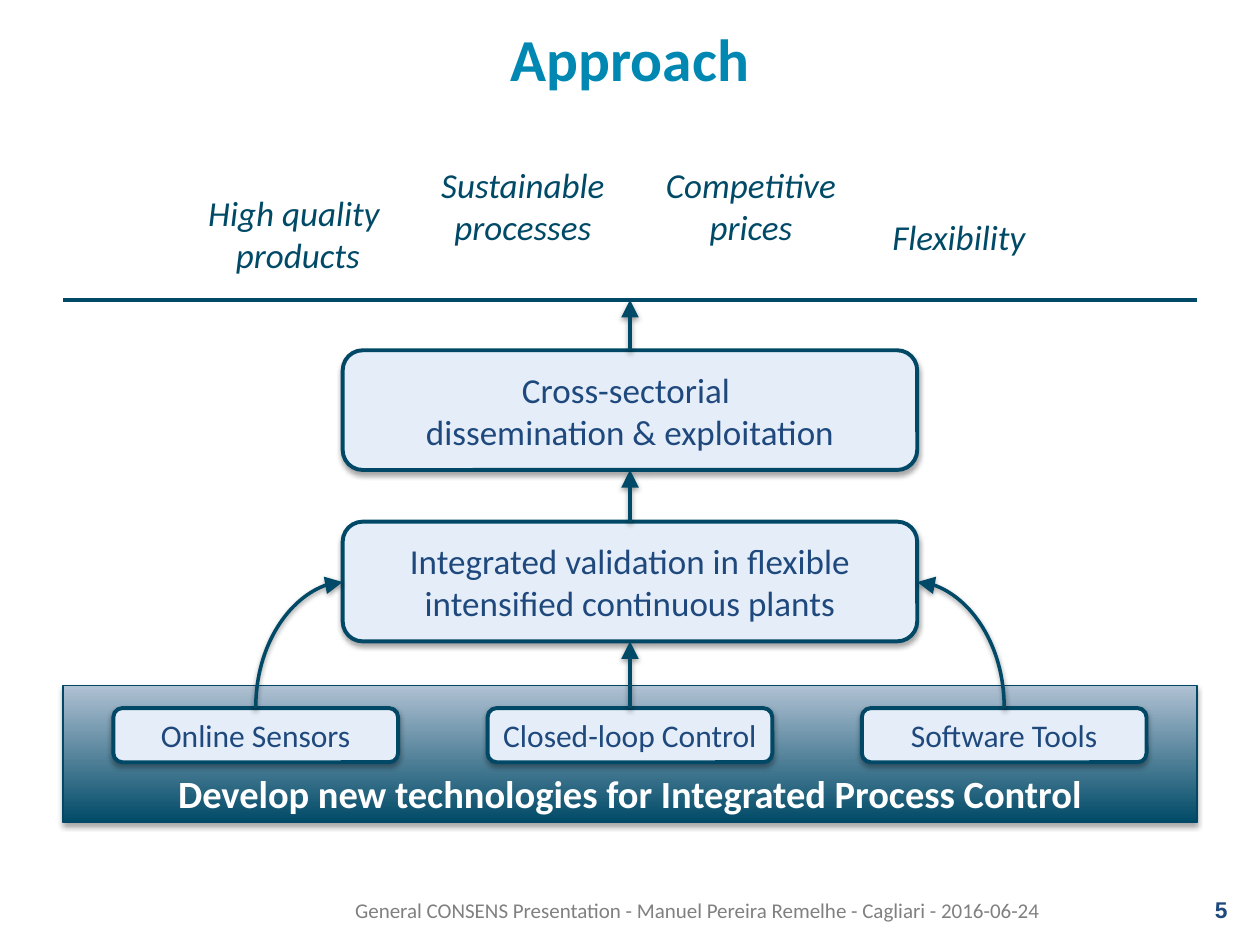
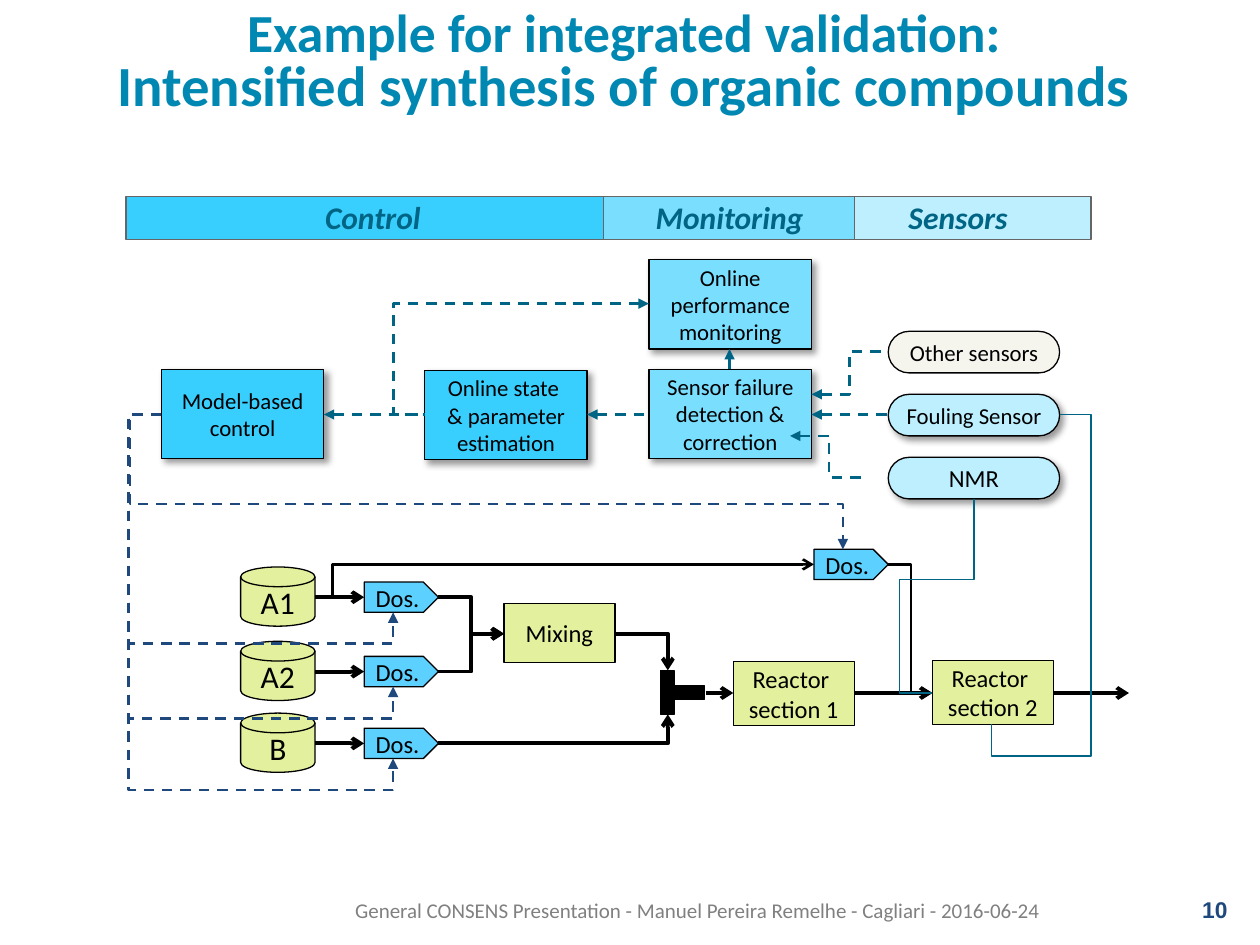
from lxml.etree import SubElement
from pptx import Presentation
from pptx.dml.color import RGBColor
from pptx.enum.dml import MSO_LINE
from pptx.enum.shapes import MSO_CONNECTOR as LINK, MSO_SHAPE as KIND
from pptx.enum.text import MSO_ANCHOR as ANCHOR, PP_ALIGN as ALIGN
from pptx.oxml import parse_xml
from pptx.oxml.ns import qn
from pptx.util import Inches, Pt

# The slide is a grid of 100 columns by 75 rows.
CELL = Inches(0.1)
COLUMNS, ROWS = 100, 75
TOP, LEFT, BOTTOM, RIGHT = range(4)

paint = RGBColor.from_string
TITLE_BLUE, NAVY, GREY, BLACK = "0087B2", "1F497D", "808080", "000000"
PETROL, EDGE, PALE = "004A67", "004865", "E4EDF8"
TEAL, CONTROL, MONITORING, SENSORS = "006585", "38CFFF", "7ADFFF", "BDEFFF"
VESSEL, DOSING, NEUTRAL = "E3F19E", "5CD1FF", "F5F4ED"

EFFECTS = ('<a:effectLst xmlns:a="http://schemas.openxmlformats.org/'
           'drawingml/2006/main">{}</a:effectLst>')
SHADOW = ('<a:outerShdw blurRad="{}" dist="{}" dir="{}" rotWithShape="0">'
          '<a:srgbClr val="000000"><a:alpha val="{}"/></a:srgbClr></a:outerShdw>')
BOX_SHADOW = SHADOW.format(Pt(3.1), Pt(1.8), 5400000, 35000)
ARROW_SHADOW = SHADOW.format(Pt(3.1), Pt(1.6), 5400000, 38000)
CORNER_SHADOW = SHADOW.format(Pt(4), Pt(3), 2700000, 40000)


def block(slide, kind, at, text="", fill=None, edge=BLACK, weight=0.75, shadow="",
          color=BLACK, align=ALIGN.CENTER, anchor=ANCHOR.MIDDLE, inset=None, **font):
    """Place a preset shape, or a text box when kind is None."""
    box = [round(length * CELL) for length in at]
    if kind is None:
        shape = slide.shapes.add_textbox(*box)
    else:
        shape = slide.shapes.add_shape(kind, *box)
        shape.line.color.rgb = paint(edge)
        shape.line.width = Pt(weight)
        if fill:
            shape.fill.solid()
            shape.fill.fore_color.rgb = paint(fill)
        shape._element.spPr.append(parse_xml(EFFECTS.format(shadow)))
    frame = shape.text_frame
    frame.word_wrap = True
    frame.vertical_anchor = anchor
    if inset is not None:
        for side in ("left", "top", "right", "bottom"):
            setattr(frame, f"margin_{side}", inset)
    if text:
        paragraph = frame.paragraphs[0]
        paragraph.text = text
        paragraph.alignment = align
        for run in paragraph.runs:
            run.font.color.rgb = paint(color)
            for name, value in {"name": "Calibri", **font}.items():
                setattr(run.font, name, value)
    return shape


def route(slide, points, color, weight, start=None, end=None, head=None, tail=None,
          arrow_size="med", dashed=False, shadow="", style="bent"):
    """Draw a connector through points; start and end are (shape, site) to glue to."""
    first, last = points[0], points[-1]
    ends = [round(length * CELL) for length in (*first, *last)]
    link = LINK.STRAIGHT if len(points) == 2 else LINK.ELBOW
    line = slide.shapes.add_connector(link, *ends)
    if start:
        line.begin_connect(*start)
    if end:
        line.end_connect(*end)
    for name, length in zip(("begin_x", "begin_y", "end_x", "end_y"), ends):
        setattr(line, name, length)

    properties = line._element.spPr
    if len(points) > 2:
        geometry = properties.find(qn("a:prstGeom"))
        geometry.set("prst", f"{style}Connector{len(points) - 1}")
        for turn, point in enumerate(points[1:-2]):
            axis = turn % 2
            share = (point[axis] - first[axis]) / (last[axis] - first[axis])
            SubElement(geometry.find(qn("a:avLst")), qn("a:gd"),
                       name=f"adj{turn + 1}", fmla=f"val {round(share * 100000)}")
    line.line.color.rgb = paint(color)
    line.line.width = Pt(weight)
    if dashed:
        line.line.dash_style = MSO_LINE.DASH
    for tag, arrow in (("a:headEnd", head), ("a:tailEnd", tail)):
        if arrow:
            SubElement(properties.find(qn("a:ln")), qn(tag), type=arrow,
                       w=arrow_size, len=arrow_size)
    properties.append(parse_xml(EFFECTS.format(shadow)))


deck = Presentation()
deck.slide_width, deck.slide_height = COLUMNS * CELL, ROWS * CELL

# Title, footer and number of both slides
pages = []
for number, heading, sizes in [
    ("5", "Approach", [34]),
    ("10", "Example for integrated validation: \n"
           "Intensified synthesis of organic compounds ", [30.6, 32.4]),
]:
    page = deck.slides.add_slide(deck.slide_layouts[6])
    block(page, None, (27.2, 70.2, 60.1, 4),
          "General CONSENS Presentation - Manuel Pereira Remelhe - Cagliari - 2016-06-24",
          color=GREY, align=ALIGN.LEFT, size=Pt(12))
    block(page, None, (89.6, 70.2, 8.8, 4), number, color=NAVY, align=ALIGN.RIGHT,
          name="Arial", size=Pt(13), bold=True)
    title = block(page, None, (5, 1.5, 90, 7.2), heading, color=TITLE_BLUE, bold=True)
    lines = title.text_frame.paragraphs[0]
    lines.line_spacing = 0.8
    for run, size in zip(lines.runs, sizes):
        run.font.size = Pt(size)
    pages.append(page)
approach, example = pages

# Approach: technologies at the bottom, goals at the top
base = block(approach, KIND.RECTANGLE, (5, 54.4, 90, 10.9),
             "Develop new technologies for Integrated Process Control", edge=EDGE,
             shadow=BOX_SHADOW, color="FFFFFF", anchor=ANCHOR.BOTTOM,
             size=Pt(22), bold=True)
base.fill.gradient()
base.fill.gradient_angle = 90
for stop, shade in zip(base.fill.gradient_stops, (PETROL, "B0C1D3")):
    stop.color.rgb = paint(shade)

card = dict(fill=PALE, edge=EDGE, weight=2.25, shadow=BOX_SHADOW, color=NAVY)
sensors, control, tools = [
    block(approach, KIND.ROUNDED_RECTANGLE, (9 + 29.7 * column, 56.2, 22.6, 4.3),
          technology, size=Pt(18), **card)
    for column, technology in enumerate(
        ["Online Sensors", "Closed-loop Control", "Software Tools"])
]
validation, exploitation = [
    block(approach, KIND.ROUNDED_RECTANGLE, (27.2, top, 45.6, 9.5), step,
          size=Pt(20), **card)
    for top, step in [
        (41.4, "Integrated validation in flexible intensified continuous plants"),
        (27.8, "Cross-sectorial \ndissemination & exploitation")]
]
for at, goal in [
    ((11.6, 14.7, 24.1, 7.7), "High quality \nproducts"),
    ((32.4, 12.5, 18.2, 7.7), "Sustainable\nprocesses"),
    ((50.5, 12.5, 18.2, 7.7), "Competitive prices"),
    ((62.7, 16.6, 26.8, 4.4), "Flexibility"),
]:
    block(approach, None, at, goal, color=PETROL, anchor=ANCHOR.TOP,
          size=Pt(20), italic=True)

route(approach, [(5, 23.8), (95, 23.8)], PETROL, 2)
for low, high in [(56.2, 50.9), (41.4, 37.3), (27.8, 23.8)]:
    route(approach, [(50, low), (50, high)], PETROL, 2, tail="triangle",
          arrow_size="lg", shadow=ARROW_SHADOW)
for side, edge_x, source, source_x in [(RIGHT, 72.8, tools, 79.7),
                                       (LEFT, 27.2, sensors, 20.3)]:
    route(approach, [(edge_x, 46.2), (source_x, 46.2), (source_x, 56.2)], PETROL, 2,
          start=(validation, side), end=(source, TOP), head="triangle",
          arrow_size="lg", shadow=ARROW_SHADOW, style="curved")

# Example: header bands
for left, width, fill, label_left, label, align in [
    (10, 37.9, CONTROL, 22.6, "Control", ALIGN.CENTER),
    (47.9, 20, MONITORING, 50.9, "Monitoring", ALIGN.CENTER),
    (67.8, 18.8, SENSORS, 72.1, "Sensors", ALIGN.LEFT),
]:
    block(example, KIND.RECTANGLE, (left, 15.6, width, 3.4), fill=fill, edge="666666")
    block(example, None, (label_left, 15.7, 14, 3.3), label, color=TEAL, align=align,
          anchor=ANCHOR.TOP, inset=0, size=Pt(18), bold=True, italic=True)

# Example: software functions and sensors
model, estimation, detection, performance = [
    block(example, KIND.RECTANGLE, (left, top, 12.9, 7.1), function, fill=fill,
          shadow=CORNER_SHADOW, inset=0, size=Pt(13))
    for left, top, fill, function in [
        (12.8, 29.3, CONTROL, "Model-based control"),
        (33.7, 29.4, CONTROL, "Online state \n& parameter estimation"),
        (51.5, 29.3, MONITORING, "Sensor failure detection &\ncorrection"),
        (51.5, 20.6, MONITORING, "Online performance monitoring")]
]
other, fouling, nmr = [
    block(example, KIND.ROUNDED_RECTANGLE, (70.5, 26.3 + 5 * row, 13.6, 3.3), sensor,
          fill=fill, shadow=shadow, inset=0, size=Pt(size))
    for row, (sensor, fill, shadow, size) in enumerate([
        ("Other sensors", NEUTRAL, "", 13),
        ("Fouling Sensor", SENSORS, CORNER_SHADOW, 13),
        ("NMR", SENSORS, CORNER_SHADOW, 14)])
]
for sensor in (other, fouling, nmr):
    sensor.adjustments[0] = 0.5

# Example: plant
mixing, reactor_1, reactor_2 = [
    block(example, KIND.FLOWCHART_PROCESS, at, unit, fill=VESSEL, inset=0, size=Pt(14))
    for at, unit in [((40, 47.9, 8.8, 4.7), "Mixing"),
                     ((58.2, 52.5, 9.6, 5.1), "Reactor \nsection 1"),
                     ((74, 52.4, 9.6, 5.1), "Reactor \nsection 2")]
]
junction, outlet = [
    block(example, KIND.FLOWCHART_PROCESS, at, fill=BLACK)
    for at in [(52.4, 53.2, 1.1, 3.5), (52.4, 54.4, 3.5, 1.1)]
]
doser = dict(text="Dos.", fill=DOSING, inset=0, size=Pt(14))
recycle_doser = block(example, KIND.PENTAGON, (64.6, 43.6, 5.9, 2.4), **doser)
dosers = []
signal = dict(color=NAVY, weight=1.5, tail="triangle", dashed=True)
for tank, middle in [("A1", 47.4), ("A2", 53.3), ("B", 59)]:
    block(example, KIND.FLOWCHART_MAGNETIC_DISK, (19.1, middle - 2.4, 5.9, 4.7), tank,
          fill=VESSEL, inset=0, size=Pt(18))
    dosers.append(block(example, KIND.PENTAGON, (28.9, middle - 1.2, 5.9, 2.4), **doser))
    route(example, [(25, middle), (28.9, middle)], BLACK, 2.25, tail="arrow")
for doser_a, middle in zip(dosers, (47.4, 53.3, 59)):
    route(example, [(12.8, 32.9), (10.2, 32.9), (10.2, middle + 3.7),
                    (31.2, middle + 3.7), (31.2, middle + 1.2)],
          start=(model, LEFT), end=(doser_a, BOTTOM), **signal)
route(example, [(12.8, 32.9), (10.3, 32.9), (10.3, 40), (66.9, 40), (66.9, 43.6)],
      start=(model, LEFT), end=(recycle_doser, TOP), **signal)

# Example: material flow
dose_a1, dose_a2, dose_b = dosers
for points, weight, start, end in [
    ([(34.8, 47.4), (37.4, 47.4), (37.4, 50.3), (40, 50.3)], 2.25,
     (dose_a1, RIGHT), (mixing, LEFT)),
    ([(34.8, 53.3), (37.4, 53.3), (37.4, 50.3), (40, 50.3)], 2.25,
     (dose_a2, RIGHT), (mixing, LEFT)),
    ([(34.8, 59), (53, 59), (53, 56.7)], 2.25, (dose_b, RIGHT), (junction, BOTTOM)),
    ([(48.8, 50.3), (53, 50.3), (53, 53.2)], 2.25, (mixing, RIGHT), (junction, TOP)),
    ([(56, 55), (58.2, 55)], 2.25, None, None),
    ([(67.8, 55), (74, 55)], 2.25, None, None),
    ([(83.6, 55), (89.6, 55)], 2.25, None, None),
    ([(70.5, 44.8), (72.3, 44.8), (72.3, 55), (74, 55)], 1.5,
     (recycle_doser, RIGHT), (reactor_2, LEFT)),
    ([(25, 47.4), (26.4, 47.4), (26.4, 44.8), (64.6, 44.8)], 1.5,
     None, (recycle_doser, LEFT)),
]:
    route(example, points, BLACK, weight, start, end, tail="arrow")

# Example: measuring points and data flow
route(example, [(84.1, 32.9), (86.6, 32.9), (86.6, 60), (78.7, 60), (78.7, 57.5)],
      TEAL, 1, (fouling, RIGHT), (reactor_2, BOTTOM))
route(example, [(74, 55), (71.4, 55), (71.4, 46), (77.3, 46), (77.3, 39.6)],
      TEAL, 1, (reactor_2, LEFT), (nmr, BOTTOM))
for points, start, end in [
    ([(25.7, 32.9), (33.7, 32.9)], None, None),
    ([(46.6, 32.9), (51.5, 32.9)], None, None),
    ([(64.4, 32.9), (70.5, 32.9)], None, None),
    ([(57.9, 27.7), (57.9, 29.3)], None, None),
    ([(51.5, 24.1), (31.2, 24.1), (31.2, 32.9), (33.7, 32.9)],
     (performance, LEFT), (estimation, LEFT)),
    ([(64.4, 31.3), (67.4, 31.3), (67.4, 27.9), (70.5, 27.9)], None, (other, LEFT)),
    ([(62.7, 34.6), (65.8, 34.6), (65.8, 37.9), (68.9, 37.9)], None, None),
]:
    route(example, points, TEAL, 1.5, start, end, head="triangle", dashed=True)

deck.save("out.pptx")
